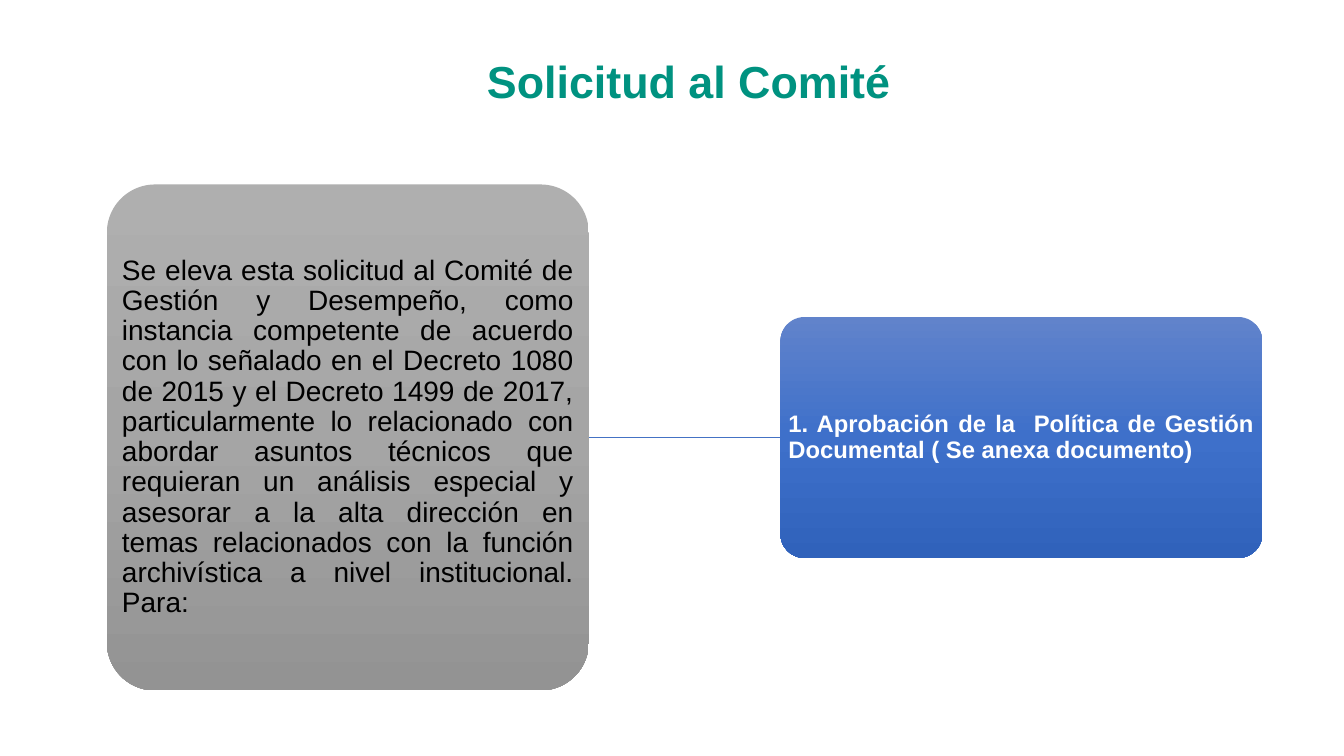
"""Build the slide with the request raised to the committee."""
from copy import deepcopy

from lxml.etree import SubElement
from pptx import Presentation
from pptx.dml.color import RGBColor
from pptx.enum.shapes import MSO_CONNECTOR, MSO_SHAPE
from pptx.enum.text import MSO_ANCHOR, MSO_AUTO_SIZE, PP_ALIGN
from pptx.oxml.ns import qn
from pptx.util import Inches, Pt


def rgb(value):
    return RGBColor.from_string(value)


def write(shape, text, align, color, inset, font):
    frame = shape.text_frame
    frame.text = text
    frame_format = {
        "word_wrap": True,
        "auto_size": MSO_AUTO_SIZE.NONE,
        "vertical_anchor": MSO_ANCHOR.MIDDLE,
        "margin_left": Inches(inset),
        "margin_right": Inches(inset),
        "margin_top": Inches(inset),
        "margin_bottom": Inches(inset),
    }
    for name, value in frame_format.items():
        setattr(frame, name, value)
    paragraph = frame.paragraphs[0]
    paragraph.alignment = align
    paragraph.line_spacing = 0.9
    for name, value in font.items():
        setattr(paragraph.runs[0].font, name, value)
    paragraph.runs[0].font.color.rgb = rgb(color)


presentation = Presentation()
presentation.slide_width = Inches(13.33)
presentation.slide_height = Inches(7.5)
slide = presentation.slides.add_slide(presentation.slide_layouts[5])

heading = slide.shapes.title
heading.left, heading.top = Inches(4.73), Inches(0.11)
heading.width, heading.height = Inches(4.37), Inches(1.45)
write(heading, "Solicitud al Comité", PP_ALIGN.LEFT, "009280", 0.1,
      {"name": "Arial", "size": Pt(32), "bold": True})

AXIS = 4.34
WIDTH = 4.78
steps = [
    (1.06, 5.02, ["AFAFAF", "A5A5A5", "939393"], "000000", 20, False,
     "Se eleva esta solicitud al Comité de Gestión y Desempeño, como instancia "
     "competente de acuerdo con lo señalado en el Decreto 1080 de 2015 y el "
     "Decreto 1499 de 2017, particularmente lo relacionado con abordar asuntos "
     "técnicos que requieran un análisis especial y asesorar a la alta dirección "
     "en temas relacionados con la función archivística a nivel institucional. "
     "Para:"),
    (7.74, 2.39, ["6183CB", "3E70CA", "3062BB"], "FFFFFF", 17, True,
     "1. Aprobación de la  Política de Gestión Documental ( Se anexa documento)"),
]
cards = []
for left, height, shades, color, size, bold, text in steps:
    card = slide.shapes.add_shape(
        MSO_SHAPE.ROUNDED_RECTANGLE, Inches(left), Inches(AXIS - height / 2),
        Inches(WIDTH), Inches(height))
    card.adjustments[0] = 0.1
    card.shadow.inherit = False
    card.line.fill.background()
    card.fill.gradient()
    card.fill.gradient_angle = 270
    stop_list = card._element.spPr.find(".//" + qn("a:gsLst"))
    stop_list.insert(1, deepcopy(stop_list[0]))
    for stop, shade, position in zip(card.fill.gradient_stops, shades, (0, 0.5, 1)):
        stop.color.rgb = rgb(shade)
        stop.position = position
    write(card, text, PP_ALIGN.JUSTIFY, color, 0.01,
          {"name": "Arial", "size": Pt(size), "bold": bold})
    cards.append(card)

request, approval = cards
link = slide.shapes.add_connector(
    MSO_CONNECTOR.STRAIGHT, Inches(1.06 + WIDTH), Inches(AXIS), Inches(7.74), Inches(AXIS))
link.begin_connect(request, 3)
link.end_connect(approval, 1)
link.line.color.rgb = rgb("4472C4")
link.line.width = Pt(1)
SubElement(link._element.spPr, qn("a:effectLst"))

presentation.save("out.pptx")
